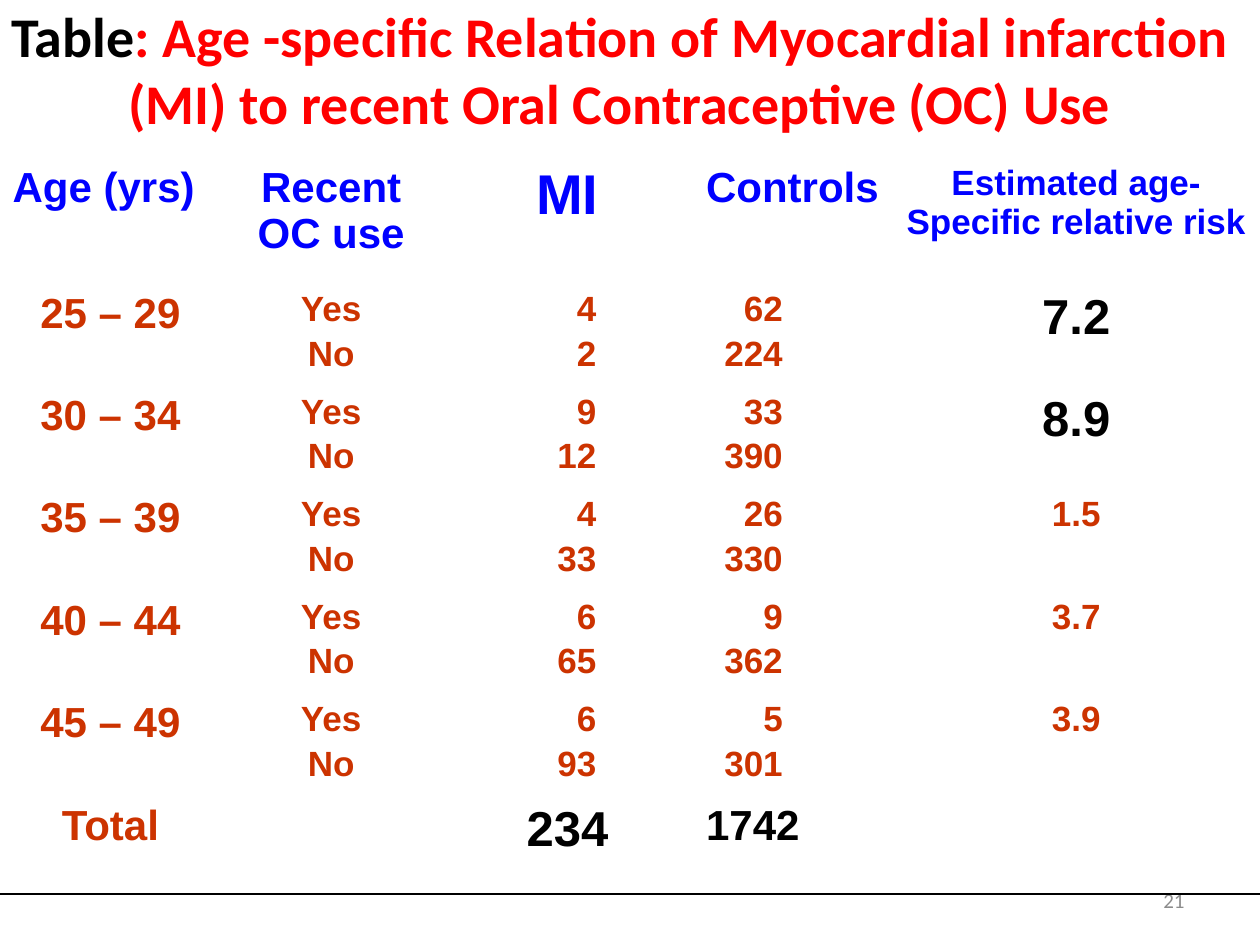
from lxml.etree import SubElement
from pptx import Presentation
from pptx.dml.color import RGBColor
from pptx.enum.text import MSO_ANCHOR, PP_ALIGN
from pptx.oxml.ns import qn
from pptx.util import Cm, Pt

COLORS = {
    "black": "000000",
    "white": "FFFFFF",
    "red": "FF0000",
    "blue": "0000FF",
    "rust": "CC3300",
    "gray": "8C8C8C",
}
COLUMN_WIDTHS = [4.45, 4.45, 5.08, 4.01, 7.41]
HEADER_HEIGHT = 2.54
ROW_HEIGHT = 1.98
MI_MARGIN = 1.96
CONTROLS_MARGIN = 2.21

HEADERS = [
    ("Age (yrs)", 24, PP_ALIGN.LEFT),
    ("Recent OC use", 24, PP_ALIGN.CENTER),
    ("MI", 32, PP_ALIGN.CENTER),
    ("Controls", 24, PP_ALIGN.LEFT),
    ("Estimated age-Specific relative risk", 20, PP_ALIGN.CENTER),
]
AGE_GROUPS = [
    ("25 – 29", ["4", "2"], ["62", "224"], "7.2", True),
    ("30 – 34", ["9", "12"], ["33", "390"], "8.9", True),
    ("35 – 39", ["4", "33"], ["26", "330"], "1.5", False),
    ("40 – 44", ["6", "65"], ["9", "362"], "3.7", False),
    ("45 – 49", ["6", "93"], ["5", "301"], "3.9", False),
]


def color(name):
    return RGBColor.from_string(COLORS[name])


def style_font(font, name, size, color_name, bold=True):
    font.name = name
    font.size = Pt(size)
    font.bold = bold
    font.color.rgb = color(color_name)


def add_text_box(page, left, top, width, height, align):
    box = page.shapes.add_textbox(Cm(left), Cm(top), Cm(width), Cm(height))
    frame = box.text_frame
    frame.word_wrap = True
    frame.vertical_anchor = MSO_ANCHOR.MIDDLE
    para = frame.paragraphs[0]
    para.alignment = align
    return para


def add_title(page):
    para = add_text_box(page, -0.2, -0.84, 25.4, 4.45, PP_ALIGN.CENTER)
    style_font(para.font, "Calibri", 32, "red")
    label = para.add_run()
    label.text = "Table"
    label.font.color.rgb = color("black")
    span = para.add_run()
    span.text = (": Age -specific Relation of Myocardial infarction (MI) "
                 "to recent Oral Contraceptive (OC) Use")


def add_page_number(page):
    para = add_text_box(page, 18.2, 17.65, 5.93, 1.01, PP_ALIGN.RIGHT)
    para.text = "21"
    style_font(para.font, "Calibri", 12, "gray", bold=False)


def fill_cell(cell, lines, size, color_name, align=PP_ALIGN.CENTER, margin=None):
    cell.text = "\n".join(lines)
    if margin:
        cell.margin_right = Cm(margin)
    for index, para in enumerate(cell.text_frame.paragraphs):
        para.alignment = align
        para.space_before = Pt(3.3 if index else 0)
        style_font(para.font, "Arial", size, color_name)


def rule_below(cell):
    properties = cell._tc.get_or_add_tcPr()
    line = SubElement(properties, qn("a:lnB"), w=str(Pt(1)))
    fill = SubElement(line, qn("a:solidFill"))
    SubElement(fill, qn("a:srgbClr"), val=COLORS["black"])
    properties.insert(0, line)


def add_grid(page):
    row_count = len(AGE_GROUPS) + 2
    height = HEADER_HEIGHT + ROW_HEIGHT * (row_count - 1)
    table = page.shapes.add_table(
        row_count, len(COLUMN_WIDTHS), Cm(0), Cm(3.18),
        Cm(sum(COLUMN_WIDTHS)), Cm(height)).table
    table.first_row = False
    table.horz_banding = False
    for column, width in zip(table.columns, COLUMN_WIDTHS):
        column.width = Cm(width)
    for index, row in enumerate(table.rows):
        row.height = Cm(ROW_HEIGHT if index else HEADER_HEIGHT)
        for cell in row.cells:
            if index:
                cell.fill.background()
                rule_below(cell)
            else:
                cell.fill.solid()
                cell.fill.fore_color.rgb = color("white")
    return table


def add_risk_table(page):
    table = add_grid(page)
    for column, (text, size, align) in enumerate(HEADERS):
        fill_cell(table.cell(0, column), [text], size, "blue", align)

    for row, (age, cases, controls, risk, high) in enumerate(AGE_GROUPS, 1):
        fill_cell(table.cell(row, 0), [age], 24, "rust")
        fill_cell(table.cell(row, 1), ["Yes", "No"], 20, "rust")
        fill_cell(table.cell(row, 2), cases, 20, "rust", PP_ALIGN.RIGHT, MI_MARGIN)
        fill_cell(table.cell(row, 3), controls, 20, "rust", PP_ALIGN.RIGHT, CONTROLS_MARGIN)
        fill_cell(table.cell(row, 4), [risk], 28 if high else 20, "black" if high else "rust")

    total = len(AGE_GROUPS) + 1
    fill_cell(table.cell(total, 0), ["Total"], 24, "rust")
    fill_cell(table.cell(total, 2), ["234"], 28, "black")
    fill_cell(table.cell(total, 3), ["1742"], 24, "black", PP_ALIGN.LEFT)


def main():
    deck = Presentation()
    deck.slide_width = Cm(25.4)
    deck.slide_height = Cm(19.05)
    page = deck.slides.add_slide(deck.slide_layouts[6])
    add_page_number(page)
    add_title(page)
    add_risk_table(page)
    deck.save("out.pptx")


if __name__ == "__main__":
    main()
